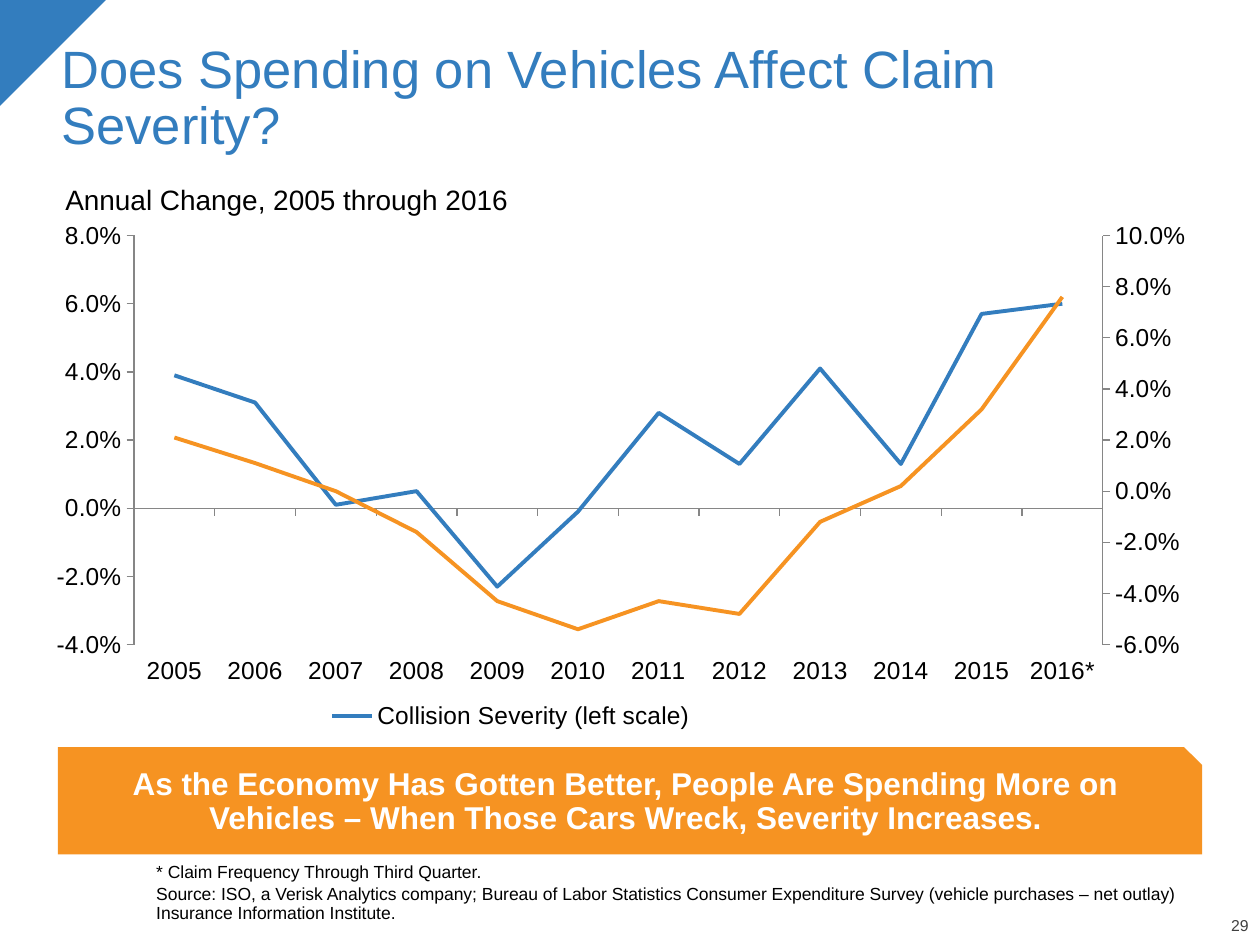
import copy
from dataclasses import dataclass

import pptx
import pptx.chart.data
import pptx.dml.color
import pptx.enum.chart
import pptx.enum.shapes
import pptx.enum.text
import pptx.oxml
import pptx.oxml.ns
import pptx.util
from pptx.util import Inches


@dataclass(frozen=True)
class Theme:
    font: str = "Arial"
    blue: str = "337DBE"
    orange: str = "F69322"
    black: str = "000000"
    white: str = "FFFFFF"
    grey: str = "404040"
    axis: str = "868686"
    title: int = 30
    banner: int = 18
    subtitle: int = 16
    chart: int = 14
    note: int = 10
    page: int = 9
    line: float = 2.25


THEME = Theme()
ALIGN = pptx.enum.text.PP_ALIGN
ANCHOR = pptx.enum.text.MSO_ANCHOR
SHAPE = pptx.enum.shapes.MSO_SHAPE
CHART = pptx.enum.chart
DEFAULT_INSETS = (0.1, 0.05, 0.1, 0.05)
NO_INSETS = (0, 0, 0, 0)

YEARS = [str(year) for year in range(2005, 2016)] + ["2016*"]
SEVERITY = [0.039, 0.031, 0.001, 0.005, -0.023, -0.001,
            0.028, 0.013, 0.041, 0.013, 0.057, 0.06]
PURCHASES = [0.021, 0.011, 0, -0.016, -0.043, -0.054,
             -0.043, -0.048, -0.012, 0.002, 0.032, 0.076]


def rgb(value):
    return pptx.dml.color.RGBColor.from_string(value)


def style_font(font, size, color, bold=False):
    font.name = THEME.font
    font.size = pptx.util.Pt(size)
    font.color.rgb = rgb(color)
    font.bold = bold


def write(frame, lines, size, color, align=ALIGN.LEFT, anchor=ANCHOR.TOP,
          insets=DEFAULT_INSETS, bold=False, gap=0):
    frame.word_wrap = True
    frame.vertical_anchor = anchor
    (frame.margin_left, frame.margin_top,
     frame.margin_right, frame.margin_bottom) = map(Inches, insets)
    for index, line in enumerate(lines):
        paragraph = frame.add_paragraph() if index else frame.paragraphs[0]
        paragraph.alignment = align
        paragraph.line_spacing = 0.9
        if index:
            paragraph.space_before = pptx.util.Pt(gap)
        run = paragraph.add_run()
        run.text = line
        style_font(run.font, size, color, bold)


def add_text(slide, box, lines, size, color, **options):
    textbox = slide.shapes.add_textbox(*map(Inches, box))
    write(textbox.text_frame, lines, size, color, **options)


def add_block(slide, kind, box, color):
    block = slide.shapes.add_shape(kind, *map(Inches, box))
    block.shadow.inherit = False
    block.fill.solid()
    block.fill.fore_color.rgb = rgb(color)
    block.line.fill.background()
    return block


def set_layout(parent, position, x, y, w, h, inner=False):
    for old in parent.xpath("c:layout"):
        parent.remove(old)
    target = '<c:layoutTarget val="inner"/>' if inner else ""
    parent.insert(position, pptx.oxml.parse_xml(
        f'<c:layout {pptx.oxml.ns.nsdecls("c")}><c:manualLayout>{target}'
        '<c:xMode val="edge"/><c:yMode val="edge"/>'
        f'<c:x val="{x}"/><c:y val="{y}"/><c:w val="{w}"/><c:h val="{h}"/>'
        '</c:manualLayout></c:layout>'))


def set_val(parent, query, value):
    parent.xpath(query)[0].set("val", str(value))


def move_last_series_right(plot_area, low, high):
    left_lines = plot_area.xpath("c:lineChart")[0]
    right_lines = copy.deepcopy(left_lines)
    left_lines.remove(left_lines.xpath("c:ser")[-1])
    for series in right_lines.xpath("c:ser")[:-1]:
        right_lines.remove(series)
    left_lines.addnext(right_lines)

    years = copy.deepcopy(plot_area.xpath("c:catAx")[0])
    scale = copy.deepcopy(plot_area.xpath("c:valAx")[0])
    years_id, scale_id = 5001, 5002
    for axis, own_id, cross_id in ((years, years_id, scale_id),
                                   (scale, scale_id, years_id)):
        set_val(axis, "c:axId", own_id)
        set_val(axis, "c:crossAx", cross_id)
    for reference, axis_id in zip(right_lines.xpath("c:axId"),
                                  (years_id, scale_id)):
        reference.set("val", str(axis_id))
    set_val(years, "c:delete", 1)
    set_val(scale, "c:axPos", "r")
    set_val(scale, "c:crosses", "max")
    set_val(scale, "c:scaling/c:min", low)
    set_val(scale, "c:scaling/c:max", high)
    left_scale = plot_area.xpath("c:valAx")[0]
    left_scale.addnext(scale)
    scale.addnext(years)


def add_severity_chart(slide, box):
    data = pptx.chart.data.CategoryChartData(number_format="0.0%")
    data.categories = YEARS
    data.add_series("Collision Severity (left scale)", SEVERITY)
    data.add_series("Previous 6-yr avg  vehicle purchases (right scale)", PURCHASES)
    chart = slide.shapes.add_chart(
        CHART.XL_CHART_TYPE.LINE, *map(Inches, box), data).chart
    style_font(chart.font, THEME.chart, THEME.black)
    chart.has_title = False
    chart.has_legend = True
    chart.legend.position = CHART.XL_LEGEND_POSITION.BOTTOM
    chart.legend.include_in_layout = False
    chart.plots[0].vary_by_categories = False
    for series, color in zip(chart.plots[0].series, (THEME.blue, THEME.orange)):
        series.smooth = False
        series.marker.style = CHART.XL_MARKER_STYLE.NONE
        series.format.line.color.rgb = rgb(color)
        series.format.line.width = pptx.util.Pt(THEME.line)

    for axis in (chart.category_axis, chart.value_axis):
        axis.has_major_gridlines = False
        axis.major_tick_mark = CHART.XL_TICK_MARK.OUTSIDE
        axis.minor_tick_mark = CHART.XL_TICK_MARK.NONE
        axis.format.line.color.rgb = rgb(THEME.axis)
        axis.format.line.width = pptx.util.Pt(0.75)
    chart.category_axis.tick_label_position = CHART.XL_TICK_LABEL_POSITION.LOW
    scale = chart.value_axis
    scale.minimum_scale, scale.maximum_scale, scale.major_unit = -0.04, 0.08, 0.02
    scale.tick_labels.number_format = "0.0%"
    scale.tick_labels.number_format_is_linked = False

    chart_space = chart.element if hasattr(chart, "element") else chart._chartSpace
    plot_area = chart_space.xpath("c:chart/c:plotArea")[0]
    move_last_series_right(plot_area, -0.06, 0.1)
    set_layout(plot_area, 0, 0.08, 0.06, 0.85, 0.75, inner=True)
    set_layout(chart_space.xpath("c:chart/c:legend")[0], 1, 0.23, 0.88, 0.5, 0.12)


def main():
    deck = pptx.Presentation()
    deck.slide_width, deck.slide_height = Inches(10), Inches(7.5)
    slide = deck.slides.add_slide(deck.slide_layouts[6])

    corner = add_block(slide, SHAPE.RIGHT_TRIANGLE, (0, 0, 0.84, 0.84), THEME.blue)
    corner.rotation = 90
    add_text(slide, (9.43, 7.29, 0.48, 0.13), ["29"], THEME.page, THEME.grey,
             align=ALIGN.RIGHT, anchor=ANCHOR.BOTTOM, insets=NO_INSETS)
    add_text(slide, (0.39, 0.25, 9.25, 1.04),
             ["Does Spending on Vehicles Affect Claim Severity?"],
             THEME.title, THEME.blue, anchor=ANCHOR.BOTTOM)
    add_text(slide, (0.42, 1.43, 9.25, 0.43), ["Annual Change, 2005 through 2016"],
             THEME.subtitle, THEME.black)
    add_text(slide, (1.24, 6.88, 8.4, 0.45),
             ["* Claim Frequency Through Third Quarter.",
              "Source: ISO, a Verisk Analytics company; Bureau of Labor Statistics "
              "Consumer Expenditure Survey (vehicle purchases – net outlay) "
              "Insurance Information Institute."],
             THEME.note, THEME.black, anchor=ANCHOR.BOTTOM, insets=NO_INSETS, gap=2)
    banner = add_block(slide, SHAPE.SNIP_1_RECTANGLE, (0.46, 5.93, 9.08, 0.85),
                       THEME.orange)
    write(banner.text_frame,
          ["As the Economy Has Gotten Better, People Are Spending More on "
           "Vehicles – When Those Cars Wreck, Severity Increases."],
          THEME.banner, THEME.white, align=ALIGN.CENTER, anchor=ANCHOR.MIDDLE,
          insets=(0.1, 0.05, 0.1, 0.1), bold=True)
    add_severity_chart(slide, (0.34, 1.61, 9.07, 4.33))
    deck.save("out.pptx")


if __name__ == "__main__":
    main()
